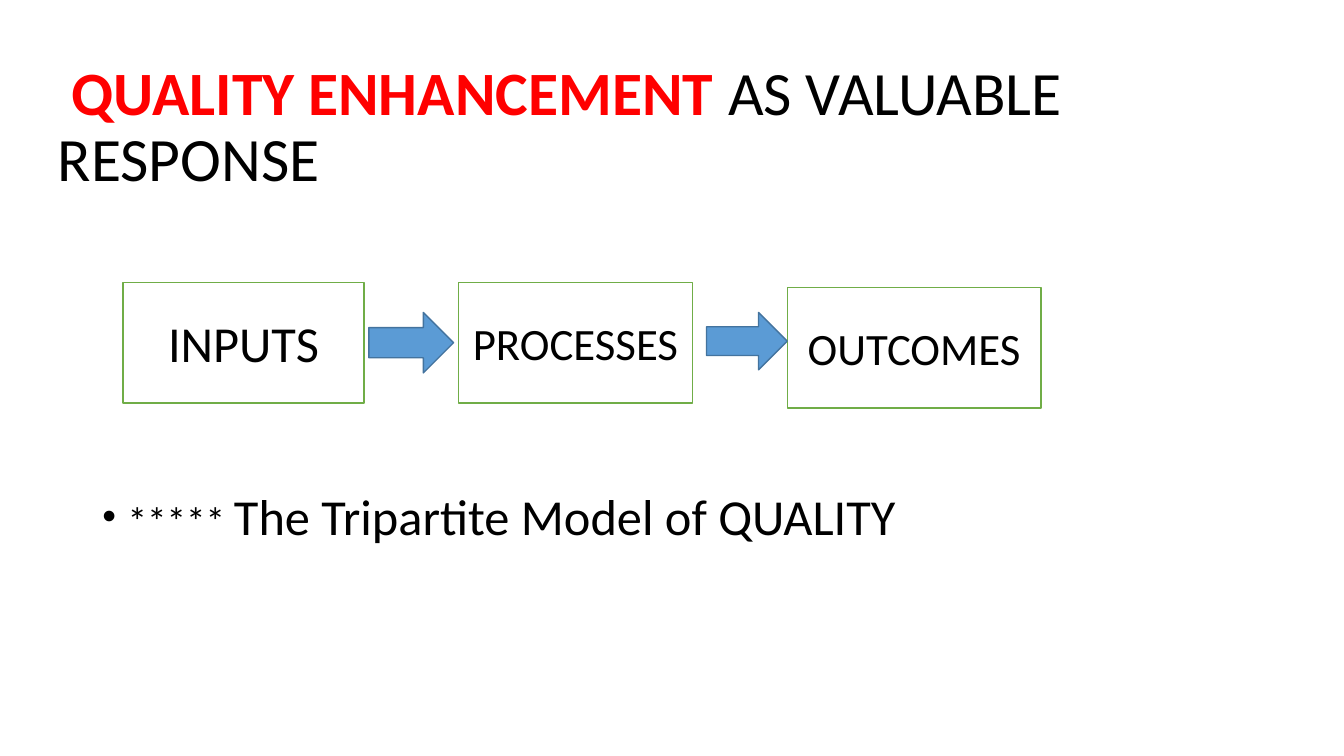
from pptx import Presentation
from pptx.dml.color import RGBColor
from pptx.enum.shapes import MSO_SHAPE
from pptx.enum.text import MSO_ANCHOR, MSO_AUTO_SIZE, PP_ALIGN
from pptx.util import Pt

BLACK = RGBColor(0x00, 0x00, 0x00)
WHITE = RGBColor(0xFF, 0xFF, 0xFF)
RED = RGBColor(0xFF, 0x00, 0x00)
GREEN = RGBColor(0x70, 0xAD, 0x47)
BLUE = RGBColor(0x5B, 0x9B, 0xD5)
DARK_BLUE = RGBColor(0x43, 0x73, 0x9E)


def add_run(paragraph, text, size, color=BLACK, bold=False):
    run = paragraph.add_run()
    run.text = text
    run.font.name = "Calibri"
    run.font.size = Pt(size)
    run.font.bold = bold
    run.font.color.rgb = color


def add_stage_shape(kind, left, top, width, height, fill, line):
    shape = slide.shapes.add_shape(kind, Pt(left), Pt(top), Pt(width), Pt(height))
    shape.shadow.inherit = False
    shape.fill.solid()
    shape.fill.fore_color.rgb = fill
    shape.line.color.rgb = line
    shape.line.width = Pt(1)
    return shape


prs = Presentation()
prs.slide_width, prs.slide_height = Pt(960), Pt(540)
slide = prs.slides.add_slide(prs.slide_layouts[1])

heading = slide.shapes.title
heading.left, heading.top, heading.width, heading.height = Pt(34), Pt(39.6), Pt(828), Pt(104.4)
heading.text_frame.auto_size = MSO_AUTO_SIZE.NONE
heading.text_frame.vertical_anchor = MSO_ANCHOR.MIDDLE
heading_line = heading.text_frame.paragraphs[0]
heading_line.alignment = PP_ALIGN.LEFT
heading_line.line_spacing = 0.9
add_run(heading_line, " ", 44)
add_run(heading_line, "QUALITY ENHANCEMENT ", 44, RED, bold=True)
add_run(heading_line, "AS VALUABLE RESPONSE", 44)

model_note = slide.placeholders[1]
model_note.left, model_note.top, model_note.width, model_note.height = Pt(66), Pt(347.8), Pt(828), Pt(139)
model_note.text_frame.auto_size = MSO_AUTO_SIZE.NONE
model_line = model_note.text_frame.paragraphs[0]
model_line.line_spacing = 0.9
model_line.space_before = Pt(0)
bullet_indent = model_line._p.get_or_add_pPr()
bullet_indent.set("marL", str(Pt(18)))
bullet_indent.set("indent", str(-Pt(18)))
add_run(model_line, "***** ", 28)
add_run(model_line, "The Tripartite Model of QUALITY", 36)

stages = [
    ("INPUTS", 88, 201.6, 172, 36),
    ("PROCESSES", 327.6, 201.6, 167, 32),
    ("OUTCOMES", 562.3, 205.2, 181.4, 32),
]
for name, left, top, width, size in stages:
    stage = add_stage_shape(MSO_SHAPE.RECTANGLE, left, top, width, 86.4, WHITE, GREEN)
    stage.text_frame.vertical_anchor = MSO_ANCHOR.MIDDLE
    stage_line = stage.text_frame.paragraphs[0]
    stage_line.alignment = PP_ALIGN.CENTER
    add_run(stage_line, name, size)

for left, width, height in [(263.5, 60.5, 43.2), (504.7, 57.6, 41)]:
    add_stage_shape(MSO_SHAPE.RIGHT_ARROW, left, 223.2, width, height, BLUE, DARK_BLUE)

prs.save("out.pptx")
